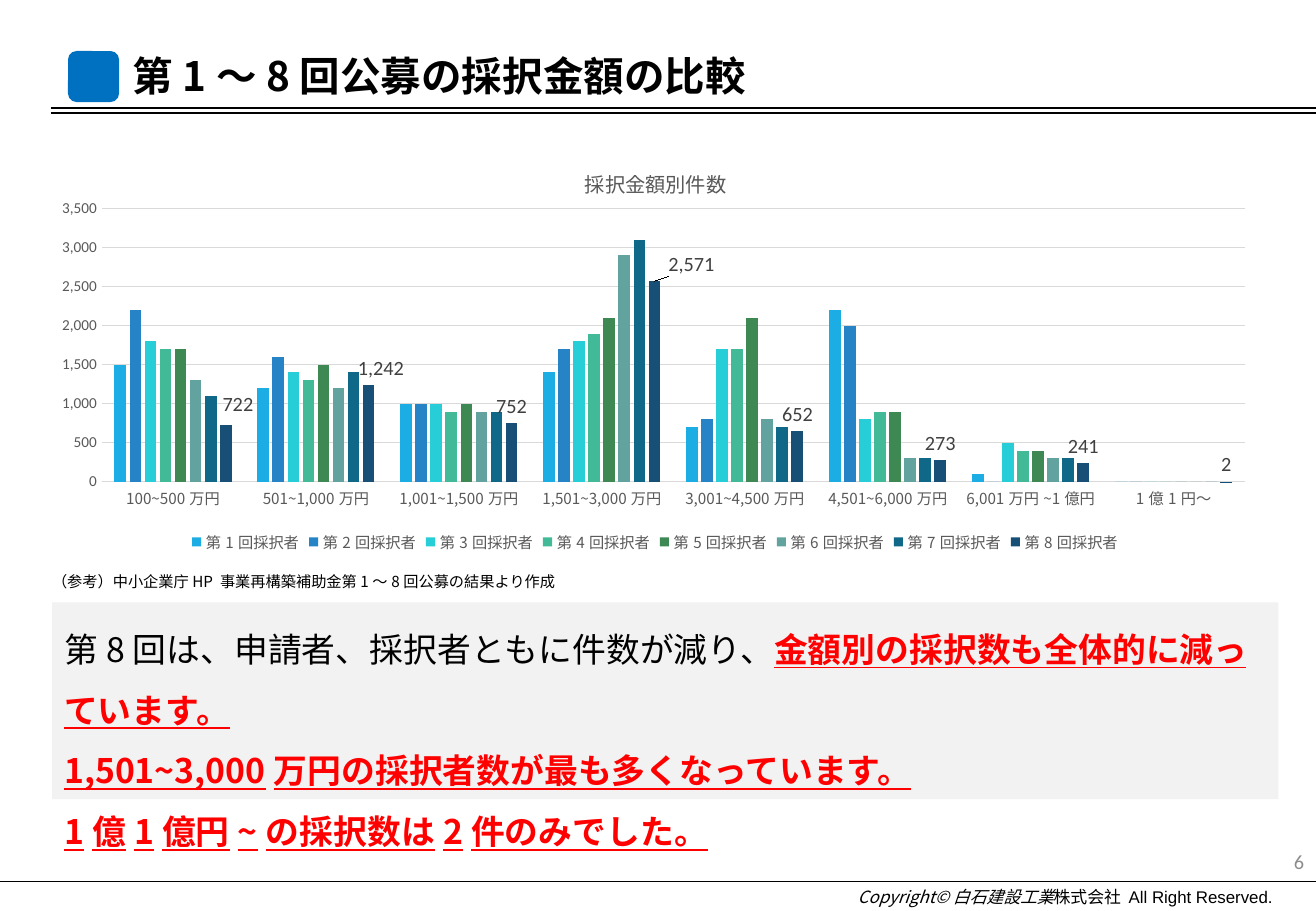
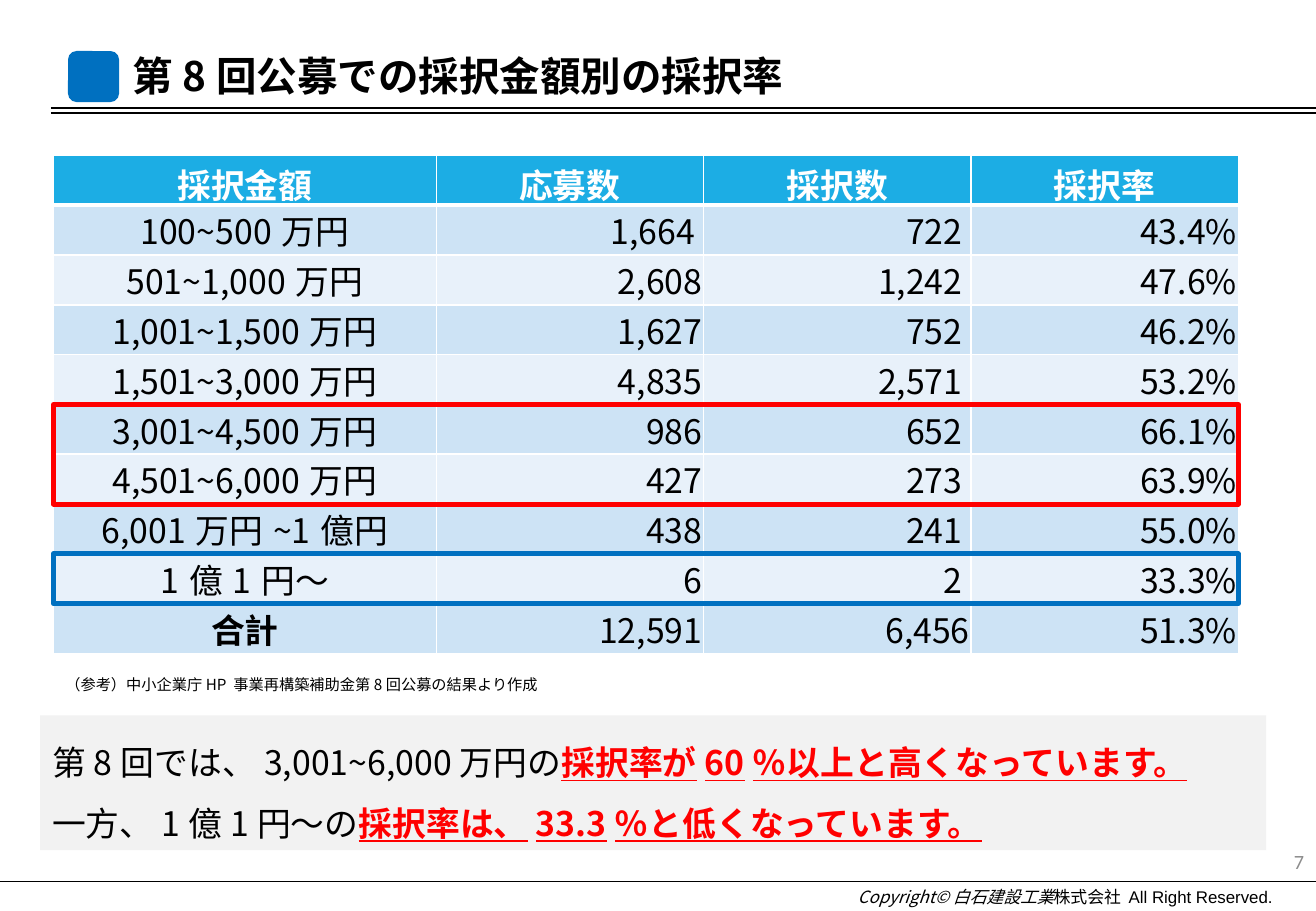
from lxml import etree
from pptx import Presentation
from pptx.chart.data import CategoryChartData
from pptx.dml.color import RGBColor
from pptx.enum.chart import XL_CHART_TYPE, XL_LABEL_POSITION, XL_LEGEND_POSITION, XL_TICK_MARK
from pptx.enum.shapes import MSO_CONNECTOR, MSO_SHAPE
from pptx.enum.text import MSO_ANCHOR, PP_ALIGN
from pptx.oxml import parse_xml
from pptx.oxml.ns import nsdecls, qn
from pptx.util import Inches, Pt


class Theme:
    black, white, red, blue = "000000", "FFFFFF", "FF0000", "0070C0"
    panel, head, bands = "F2F2F2", "1CADE4", ("CDE3F5", "E8F1FA")
    grid, label, value, page = "D9D9D9", "595959", "404040", "8C8C8C"
    series = ("1CADE4", "2683C6", "27CED7", "42BA97",
              "3E8853", "62A39F", "106889", "174F77")
    sans, latin, foot = "Noto Sans CJK JP", "Calibri", "Arial"
    title, body, mid, base, small = 24, 20, 12, 10, 9


WIDE, HIGH = 10.83, 7.5
BANDS = ["100~500万円", "501~1,000万円", "1,001~1,500万円", "1,501~3,000万円",
         "3,001~4,500万円", "4,501~6,000万円", "6,001万円~1億円", "1億1円～"]
COUNTS = [
    (1500, 1200, 1000, 1400, 700, 2200, 100, 0),
    (2200, 1600, 1000, 1700, 800, 2000, 0, 0),
    (1800, 1400, 1000, 1800, 1700, 800, 500, 0),
    (1700, 1300, 900, 1900, 1700, 900, 400, 0),
    (1700, 1500, 1000, 2100, 2100, 900, 400, 0),
    (1300, 1200, 900, 2900, 800, 300, 300, 0),
    (1100, 1400, 900, 3100, 700, 300, 300, 0),
    (722, 1242, 752, 2571, 652, 273, 241, 2),
]
RATES = [("1,664", "722", "43.4%"), ("2,608", "1,242", "47.6%"),
         ("1,627", "752", "46.2%"), ("4,835", "2,571", "53.2%"),
         ("986", "652", "66.1%"), ("427", "273", "63.9%"),
         ("438", "241", "55.0%"), ("6", "2", "33.3%")]


# Basic parts
def rgb(code):
    return RGBColor.from_string(code)


def style(font, size, color=Theme.black, name=Theme.sans, bold=False):
    font.size, font.name, font.bold = Pt(size), name, bold
    font.color.rgb = rgb(color)


def inch(box):
    return [Inches(n) for n in box]


def text(slide, box, words, size, color=Theme.black, name=Theme.sans,
         bold=False, align=PP_ALIGN.LEFT):
    frame = slide.shapes.add_textbox(*inch(box)).text_frame
    frame.word_wrap = True
    para = frame.paragraphs[0]
    para.text, para.alignment = words, align
    style(para.font, size, color, name, bold)
    return para


def shape(slide, kind, box, fill=None, line=None):
    item = slide.shapes.add_shape(kind, *inch(box))
    item.shadow.inherit = False
    if fill:
        item.fill.solid()
        item.fill.fore_color.rgb = rgb(fill)
    else:
        item.fill.background()
    if line:
        item.line.color.rgb = rgb(line)
        item.line.width = Pt(3)
    else:
        item.line.fill.background()
    return item


def rule(slide, left, top):
    line = slide.shapes.add_connector(
        MSO_CONNECTOR.STRAIGHT, *inch((left, top, WIDE, top)))
    line.line.color.rgb = rgb(Theme.black)
    line.line.width = Pt(0.75)
    etree.SubElement(line._element.spPr, qn("a:effectLst"))


def east(root):
    """Give East Asian letters the same sans font throughout."""
    for latin in list(root.iter(qn("a:latin"))):
        mark = etree.Element(qn("a:ea"))
        mark.set("typeface", Theme.sans)
        latin.addnext(mark)


# Title band and footer
def frame(deck, title, page):
    slide = deck.slides.add_slide(deck.slide_layouts[6])
    for left, top in ((0.42, 0.89), (0.42, 0.93), (0, 7.26)):
        rule(slide, left, top)
    shape(slide, MSO_SHAPE.ROUNDED_RECTANGLE, (0.56, 0.42, 0.42, 0.42), Theme.blue)
    text(slide, (0.99, 0.37, 6.73, 0.5), title, Theme.title, bold=True)
    para = text(slide, (6.96, 7.25, 3.87, 0.25), "", Theme.base)
    for words, name, slant in (("Copyright©白石建設工業", Theme.sans, True),
                               ("株式会社 All Right Reserved.", Theme.foot, False)):
        run = para.add_run()
        run.text = words
        run.font.name, run.font.italic = name, slant
    text(slide, (8.4, 6.94, 2.43, 0.4), page, Theme.mid, Theme.page,
         Theme.latin, align=PP_ALIGN.RIGHT)
    return slide


# Grey panel: each line is a plain part and a stressed part
def panel(slide, box, lines):
    body = shape(slide, MSO_SHAPE.RECTANGLE, box, Theme.panel).text_frame
    body.word_wrap, body.vertical_anchor = True, MSO_ANCHOR.TOP
    for i, (plain, stress) in enumerate(lines):
        para = body.add_paragraph() if i else body.paragraphs[0]
        para.alignment, para.line_spacing = PP_ALIGN.LEFT, 1.5
        style(para.font, Theme.body)
        if plain:
            para.add_run().text = plain
        run = para.add_run()
        run.text = stress
        run.font.bold = run.font.underline = True
        run.font.color.rgb = rgb(Theme.red)


# Chart
def layout(x, y, w=None, h=None, inner=False):
    parts = '<c:layoutTarget val="inner"/>' if inner else ""
    if w:
        parts += '<c:xMode val="edge"/><c:yMode val="edge"/>'
    sizes = {"x": x, "y": y, "w": w if inner else None, "h": h}
    parts += "".join(f'<c:{k} val="{v}"/>' for k, v in sizes.items() if v is not None)
    return parse_xml(f'<c:layout {nsdecls("c")}><c:manualLayout>{parts}'
                     '</c:manualLayout></c:layout>')


def place(owner, before, new):
    for old in owner.findall(qn("c:layout")):
        owner.remove(old)
    if before is None:
        owner.insert(0, new)
    else:
        before.addnext(new)


def bars(slide, box):
    data = CategoryChartData(number_format="#,##0")
    data.categories = BANDS
    for i, row in enumerate(COUNTS, 1):
        data.add_series(f"第{i}回採択者", row)
    chart = slide.shapes.add_chart(
        XL_CHART_TYPE.COLUMN_CLUSTERED, *inch(box), data).chart
    style(chart.font, Theme.base, name=Theme.latin)

    # Title and legend
    chart.has_title = chart.has_legend = True
    para = chart.chart_title.text_frame.paragraphs[0]
    para.text = "採択金額別件数"
    style(para.font, Theme.mid, Theme.label)
    chart.legend.position = XL_LEGEND_POSITION.BOTTOM
    chart.legend.include_in_layout = False
    style(chart.legend.font, Theme.small, Theme.label)

    # Axes
    cat, val = chart.category_axis, chart.value_axis
    for axis, name in ((cat, Theme.sans), (val, Theme.latin)):
        axis.major_tick_mark = axis.minor_tick_mark = XL_TICK_MARK.NONE
        style(axis.tick_labels.font, Theme.small, Theme.label, name)
    val.minimum_scale, val.maximum_scale, val.major_unit = 0, 3500, 500
    val.tick_labels.number_format = "#,##0"
    val.tick_labels.number_format_is_linked = False
    val.format.line.fill.background()
    for line in (cat.format.line, val.major_gridlines.format.line):
        line.color.rgb = rgb(Theme.grid)
        line.width = Pt(0.75)

    # Columns
    plot = chart.plots[0]
    plot.gap_width, plot.overlap, plot.vary_by_categories = 219, -27, False
    for item, color in zip(plot.series, Theme.series):
        item.format.fill.solid()
        item.format.fill.fore_color.rgb = rgb(color)

    # Values of the last round, some moved off their columns
    last = plot.series[-1]
    tags = last.data_labels
    tags.show_value, tags.position = True, XL_LABEL_POSITION.OUTSIDE_END
    tags.number_format, tags.number_format_is_linked = "#,##0", False
    style(tags.font, Theme.mid, Theme.value, Theme.latin)
    for i in (0, 1, 3):
        tag = last.points[i].data_label
        style(tag.font, Theme.mid, Theme.value, Theme.latin)
        tag.position = XL_LABEL_POSITION.OUTSIDE_END
    shifts = {"0": (0.01, -0.01), "1": (0.01, 0), "3": (0.03, 0)}
    root = chart._chartSpace
    for node in root.iter(qn("c:dLbl")):
        idx = node.find(qn("c:idx"))
        place(node, idx, layout(*shifts[idx.get("val")]))

    # Inner layout
    head = root.chart.find(qn("c:title"))
    place(head, head.find(qn("c:tx")), layout(0.44, 0.06, 1))
    place(root.chart.plotArea, None, layout(0.05, 0.17, 0.93, 0.65, True))
    east(root)


# Table
def edges(cell, top, base):
    props = cell._tc.get_or_add_tcPr()
    for side, width in (("L", 1), ("R", 1), ("T", top), ("B", base)):
        props.append(parse_xml(
            f'<a:ln{side} {nsdecls("a")} w="{Pt(width)}"><a:solidFill>'
            f'<a:srgbClr val="{Theme.white}"/></a:solidFill></a:ln{side}>'))


def table(slide, left, top, row):
    rows = [("採択金額", "応募数", "採択数", "採択率")]
    rows += [(band, *rate) for band, rate in zip(BANDS, RATES)]
    rows.append(("合計", "12,591", "6,456", "51.3%"))
    cols = (3.15, 2.2, 2.2, 2.2)
    wide = sum(cols)
    grid = slide.shapes.add_table(
        len(rows), 4, *inch((left, top, wide, row * len(rows)))).table
    grid.horz_banding = False
    for col, width in zip(grid.columns, cols):
        col.width = Inches(width)
    for r, words in enumerate(rows):
        grid.rows[r].height = Inches(row)
        for c, word in enumerate(words):
            cell = grid.cell(r, c)
            edges(cell, 3 if r == 1 else 1, 1 if r else 3)
            cell.fill.solid()
            cell.fill.fore_color.rgb = rgb(Theme.bands[(r - 1) % 2] if r else Theme.head)
            inset = (c == 2 and 0 < r < 9) or (r, c) == (1, 1)
            cell.margin_left = Inches(0.01)
            cell.margin_right = Inches(0.07 if inset else 0.01)
            cell.margin_top = Inches(0 if r else 0.03)
            cell.margin_bottom = 0
            cell.vertical_anchor = MSO_ANCHOR.MIDDLE if r else MSO_ANCHOR.TOP
            para = cell.text_frame.paragraphs[0]
            para.text = word
            para.alignment = PP_ALIGN.RIGHT if r and c else PP_ALIGN.CENTER
            style(para.font, Theme.body, Theme.black if r else Theme.white,
                  bold=r == 0 or word == "合計")
    # Frames round the rows to note
    for first, count, color in ((5, 2, Theme.red), (8, 1, Theme.blue)):
        shape(slide, MSO_SHAPE.RECTANGLE,
              (left, top + first * row, wide, count * row), line=color)


def main():
    deck = Presentation()
    deck.slide_width, deck.slide_height = Inches(WIDE), Inches(HIGH)

    slide = frame(deck, "第1～8回公募の採択金額の比較", "6")
    panel(slide, (0.43, 4.96, 10.09, 1.62), [
        ("第8回は、申請者、採択者ともに件数が減り、", "金額別の採択数も全体的に減っています。"),
        ("", "1,501~3,000万円の採択者数が最も多くなっています。"),
        ("", "1億1億円~の採択数は2件のみでした。")])
    text(slide, (0.33, 4.66, 9.17, 0.25),
         "（参考）中小企業庁HP 事業再構築補助金第1～8回公募の結果より作成", Theme.small)
    bars(slide, (0.33, 1.13, 10.12, 3.46))

    slide = frame(deck, "第8回公募での採択金額別の採択率", "7")
    panel(slide, (0.33, 5.89, 10.09, 1.11), [
        ("第8回では、3,001~6,000万円の", "採択率が60％以上と高くなっています。"),
        ("一方、1億1円～の", "採択率は、33.3％と低くなっています。")])
    text(slide, (0.44, 5.51, 9.17, 0.25),
         "（参考）中小企業庁HP 事業再構築補助金第8回公募の結果より作成", Theme.small)
    table(slide, 0.44, 1.28, 0.41)

    for slide in deck.slides:
        east(slide._element)
    deck.save("out.pptx")


if __name__ == "__main__":
    main()
